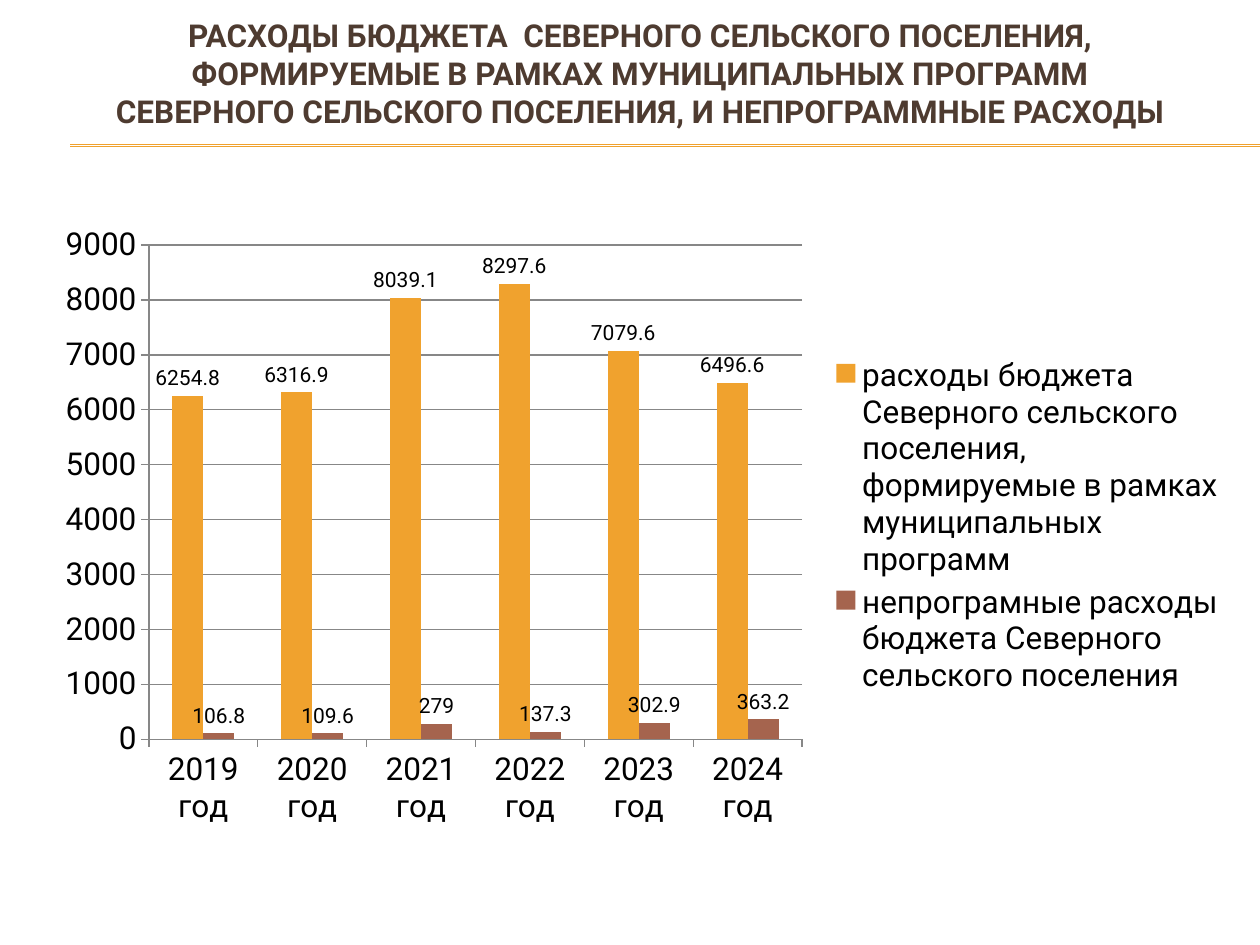
from lxml import etree
from pptx import Presentation
from pptx import util as u
from pptx.chart.data import CategoryChartData
from pptx.dml.color import RGBColor
from pptx.enum import chart as c, shapes, text
from pptx.oxml.ns import qn

ORANGE = RGBColor(0xF0, 0xA2, 0x2E)
RUST = RGBColor(0xA5, 0x64, 0x4E)
BROWN = RGBColor(0x4E, 0x3B, 0x30)
BLACK = RGBColor(0, 0, 0)
GRAY = RGBColor(0x87, 0x87, 0x87)
FONT = "Roboto"

TITLE_LINES = [
    "РАСХОДЫ БЮДЖЕТА  СЕВЕРНОГО СЕЛЬСКОГО ПОСЕЛЕНИЯ,",
    "ФОРМИРУЕМЫЕ В РАМКАХ МУНИЦИПАЛЬНЫХ ПРОГРАММ",
    "СЕВЕРНОГО СЕЛЬСКОГО ПОСЕЛЕНИЯ, И НЕПРОГРАММНЫЕ РАСХОДЫ",
]
SERIES = [
    ("расходы бюджета Северного сельского поселения, формируемые в рамках муниципальных программ",
     [6254.8, 6316.9, 8039.1, 8297.6, 7079.6, 6496.6], ORANGE),
    ("непрограмные расходы бюджета Северного сельского поселения",
     [106.8, 109.6, 279, 137.3, 302.9, 363.2], RUST),
]

presentation = Presentation()
presentation.slide_width = u.Cm(25.4)
presentation.slide_height = u.Cm(19.05)
slide = presentation.slides.add_slide(presentation.slide_layouts[6])

# Double rule under the title
for y in (2.92, 2.95):
    rule = slide.shapes.add_connector(
        shapes.MSO_CONNECTOR.STRAIGHT, u.Cm(1.42), u.Cm(y), u.Cm(25.4), u.Cm(y))
    rule.line.color.rgb = ORANGE
    rule.line.width = u.Pt(0.75)
    etree.SubElement(rule._element.spPr, qn("a:effectLst"))

# Title
title = slide.shapes.add_textbox(u.Cm(0.84), u.Cm(0.37), u.Cm(24.13), u.Cm(2.21))
frame = title.text_frame
frame.word_wrap = True
frame.vertical_anchor = text.MSO_ANCHOR.MIDDLE
frame.margin_top = frame.margin_bottom = 0
paragraph = frame.paragraphs[0]
paragraph.alignment = text.PP_ALIGN.CENTER
for index, line in enumerate(TITLE_LINES):
    if index:
        paragraph.add_line_break()
    run = paragraph.add_run()
    run.text = line
    run.font.name = FONT
    run.font.size = u.Pt(18)
    run.font.bold = True
    run.font.color.rgb = BROWN

# Expenditure chart
data = CategoryChartData()
data.categories = [f"{year} год" for year in range(2019, 2025)]
for name, values, _ in SERIES:
    data.add_series(name, values)
chart = slide.shapes.add_chart(
    c.XL_CHART_TYPE.COLUMN_CLUSTERED,
    u.Cm(0.84), u.Cm(4.32), u.Cm(24.13), u.Cm(12.57), data).chart
chart.has_title = False
chart.font.name = FONT
chart.font.size = u.Pt(18)
chart.font.color.rgb = BLACK
chart.has_legend = True
chart.legend.position = c.XL_LEGEND_POSITION.RIGHT
chart.legend.include_in_layout = False

for axis in (chart.category_axis, chart.value_axis):
    axis.major_tick_mark = c.XL_TICK_MARK.OUTSIDE
    axis.minor_tick_mark = c.XL_TICK_MARK.NONE
    axis.format.line.color.rgb = GRAY
    axis.format.line.width = u.Pt(0.75)
value_axis = chart.value_axis
value_axis.minimum_scale = 0
value_axis.maximum_scale = 9000
value_axis.major_unit = 1000
value_axis.has_major_gridlines = True
value_axis.major_gridlines.format.line.color.rgb = GRAY
value_axis.major_gridlines.format.line.width = u.Pt(0.75)

plot = chart.plots[0]
plot.gap_width = 150
plot.overlap = 0
plot.vary_by_categories = False
for series, (_, _, color) in zip(plot.series, SERIES):
    series.format.fill.solid()
    series.format.fill.fore_color.rgb = color
    labels = series.data_labels
    labels.show_value = True
    labels.position = c.XL_LABEL_POSITION.OUTSIDE_END
    labels.font.name = FONT
    labels.font.size = u.Pt(12)
    labels.font.color.rgb = BLACK

presentation.save("out.pptx")
